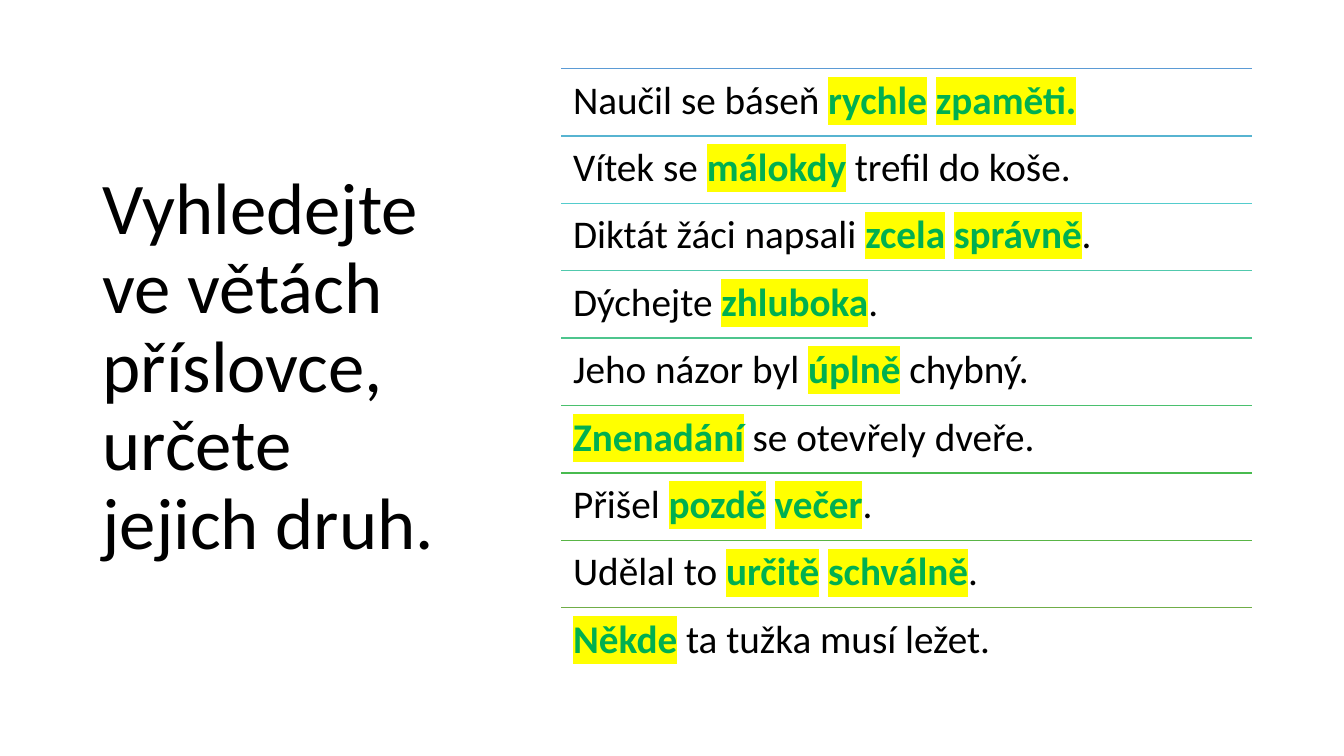
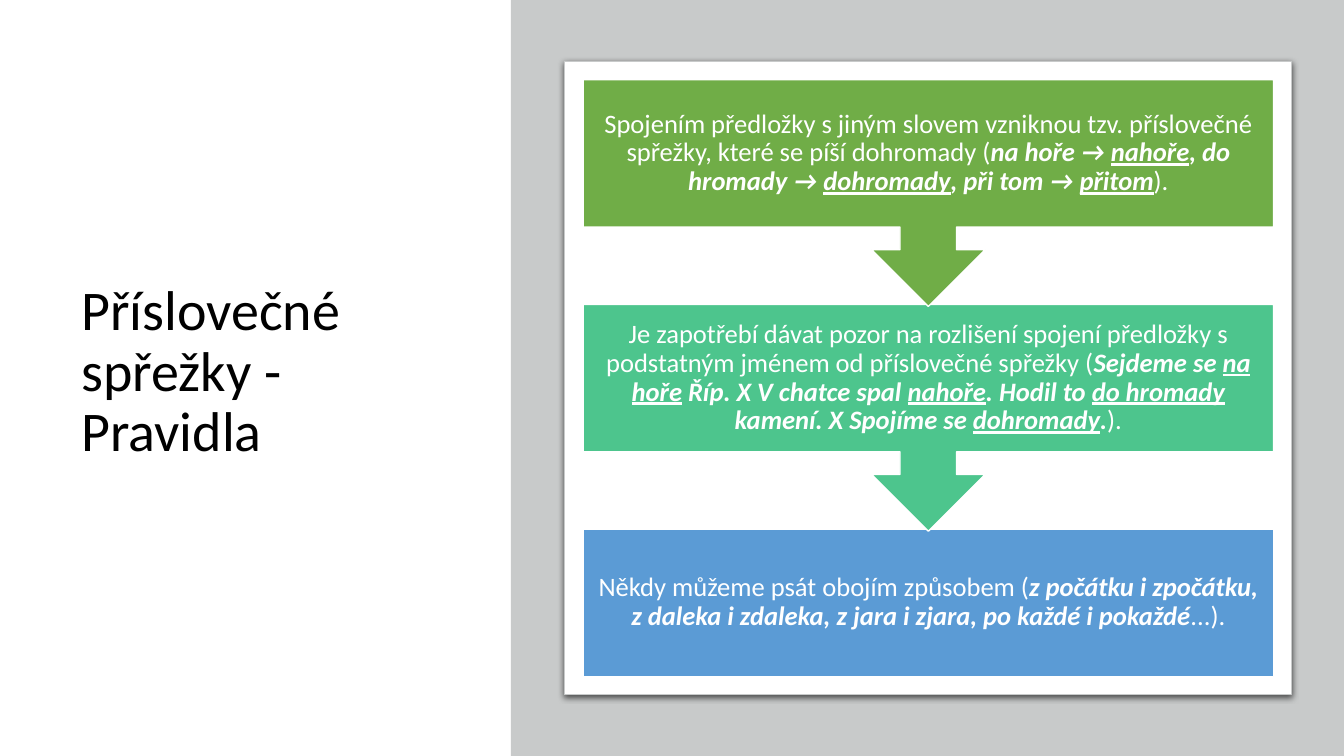
"""Builds two Czech grammar slides about adverbs and adverbial compounds."""
from lxml.etree import SubElement
from pptx import Presentation
from pptx.dml.color import RGBColor
from pptx.enum.shapes import MSO_CONNECTOR, MSO_SHAPE
from pptx.enum.text import MSO_ANCHOR, PP_ALIGN
from pptx.oxml.ns import qn
from pptx.util import Pt

FONT = "Calibri"
COLORS = {
    "black": "000000", "white": "FFFFFF", "panel": "C8CACA",
    "answer": "00B050", "marker": "FFFF00",
    "blue": "5B9BD5", "mint": "4DC58D", "green": "70AD47",
}
SLIDE_WIDTH, SLIDE_HEIGHT = 960, 540

EXERCISE_TITLE = "Vyhledejte ve větách příslovce, určete jejich druh."
SENTENCES = [
    ("5B9BD5", "Naučil se báseň *rychle* *zpaměti.*"),
    ("57B4D1", "Vítek se *málokdy* trefil do koše."),
    ("54CCCD", "Diktát žáci napsali *zcela* *správně*."),
    ("51C9AD", "Dýchejte *zhluboka*."),
    ("4DC58D", "Jeho názor byl *úplně* chybný."),
    ("4AC06E", "*Znenadání* se otevřely dveře."),
    ("48BB4F", "Přišel *pozdě* *večer*."),
    ("59B546", "Udělal to *určitě* *schválně*."),
    ("70AD47", "*Někde* ta tužka musí ležet."),
]
RULES_TITLE = "Příslovečné spřežky - Pravidla"
RULES = [
    ("green", "Spojením předložky s jiným slovem vzniknou tzv. příslovečné spřežky, "
              "které se píší dohromady (*na hoře → _nahoře_, do hromady → _dohromady_, "
              "při tom → _přitom_*)."),
    ("mint", "Je zapotřebí dávat pozor na rozlišení spojení předložky s podstatným jménem "
             "od příslovečné spřežky (*Sejdeme se _na hoře_ Říp. X V chatce spal _nahoře_. "
             "Hodil to _do hromady_ kamení. X Spojíme se _dohromady_.*)."),
    ("blue", "Někdy můžeme psát obojím způsobem (*z počátku i zpočátku, z daleka i zdaleka, "
             "z jara i zjara, po každé i pokaždé*...)."),
]

LIST_LEFT, LIST_TOP, LIST_WIDTH, ROW_HEIGHT = 401, 48.9, 493.2, 48.15
RULE_LEFT, RULE_TOP, RULE_WIDTH, RULE_STEP = 416.5, 56.9, 493.2, 160.55
CALLOUT_HEIGHT, BOX_HEIGHT = 162, 105.1


def rgb(color):
    return RGBColor.from_string(COLORS.get(color, color))


def points(*lengths):
    return [Pt(length) for length in lengths]


def mark_answer(run):
    run.font.bold = True
    run.font.color.rgb = rgb("answer")
    highlight = SubElement(run.font._element, qn("a:highlight"))
    SubElement(highlight, qn("a:srgbClr"), val=COLORS["marker"])


def stress_example(run):
    run.font.bold = run.font.italic = True


def write_text(shape, text, size, color, emphasize=None, anchor=MSO_ANCHOR.MIDDLE,
               align=PP_ALIGN.LEFT, inset=None):
    """Write text where *stars* mark emphasis and _underscores_ mark underlining."""
    frame = shape.text_frame
    frame.word_wrap = True
    frame.vertical_anchor = anchor
    if inset is not None:
        frame.margin_left = frame.margin_right = Pt(inset)
        frame.margin_top = frame.margin_bottom = Pt(inset)
    paragraph = frame.paragraphs[0]
    paragraph.alignment = align
    paragraph.line_spacing = 0.9
    paragraph.font.name = FONT
    paragraph.font.size = Pt(size)
    paragraph.font.color.rgb = rgb(color)
    for part_index, part in enumerate(text.split("*")):
        for piece_index, piece in enumerate(part.split("_")):
            if not piece:
                continue
            run = paragraph.add_run()
            run.text = piece
            if part_index % 2:
                emphasize(run)
            if piece_index % 2:
                run.font.underline = True


def add_title(slide, text, size, *box):
    write_text(slide.shapes.add_textbox(*points(*box)), text, size, "black")


def add_block(slide, kind, box, fill, line=None, line_width=1):
    shape = slide.shapes.add_shape(kind, *points(*box))
    shape.shadow.inherit = False
    shape.fill.solid()
    shape.fill.fore_color.rgb = rgb(fill)
    if line:
        shape.line.color.rgb = rgb(line)
        shape.line.width = Pt(line_width)
    else:
        shape.line.fill.background()
    return shape


def add_divider(slide, left, top, width, color):
    divider = slide.shapes.add_connector(
        MSO_CONNECTOR.STRAIGHT, *points(left, top, left + width, top))
    divider.line.color.rgb = rgb(color)
    divider.line.width = Pt(1)
    SubElement(divider._element.spPr, qn("a:effectLst"))


def add_soft_shadow(shape):
    effects = shape._element.spPr.find(qn("a:effectLst"))
    shadow = SubElement(effects, qn("a:outerShdw"), blurRad=str(Pt(4.5)),
                        dist=str(Pt(1.5)), dir="5400000", rotWithShape="0")
    color = SubElement(shadow, qn("a:srgbClr"), val=COLORS["black"])
    SubElement(color, qn("a:alpha"), val="63000")


def build_exercise(slide):
    add_title(slide, EXERCISE_TITLE, 52, 66.2, 43.9, 265.7, 438.5)
    for index, (color, sentence) in enumerate(SENTENCES):
        top = LIST_TOP + index * ROW_HEIGHT
        add_divider(slide, LIST_LEFT, top, LIST_WIDTH, color)
        row = slide.shapes.add_textbox(*points(LIST_LEFT, top, LIST_WIDTH, ROW_HEIGHT))
        write_text(row, sentence, 28, "black", mark_answer, MSO_ANCHOR.TOP, inset=8.4)


def build_rules(slide):
    add_title(slide, RULES_TITLE, 40, 51.1, 49.7, 288.7, 433.4)
    panel_left = 365
    add_block(slide, MSO_SHAPE.RECTANGLE,
              (panel_left, 0, SLIDE_WIDTH - panel_left, SLIDE_HEIGHT), "panel")
    card = add_block(slide, MSO_SHAPE.RECTANGLE, (403.2, 43.9, 519.1, 452.2),
                     "white", "panel", 0.75)
    add_soft_shadow(card)
    last = len(RULES) - 1
    for index, (color, text) in reversed(list(enumerate(RULES))):
        if index == last:
            kind, height = MSO_SHAPE.RECTANGLE, BOX_HEIGHT
        else:
            kind, height = MSO_SHAPE.DOWN_ARROW_CALLOUT, CALLOUT_HEIGHT
        box = (RULE_LEFT, RULE_TOP + index * RULE_STEP, RULE_WIDTH, height)
        rule = add_block(slide, kind, box, color, "white")
        write_text(rule, text, 19, "white", stress_example,
                   align=PP_ALIGN.CENTER, inset=10.6)


def main():
    presentation = Presentation()
    presentation.slide_width, presentation.slide_height = points(SLIDE_WIDTH, SLIDE_HEIGHT)
    blank = presentation.slide_layouts[6]
    for build in (build_exercise, build_rules):
        build(presentation.slides.add_slide(blank))
    presentation.save("out.pptx")


if __name__ == "__main__":
    main()
